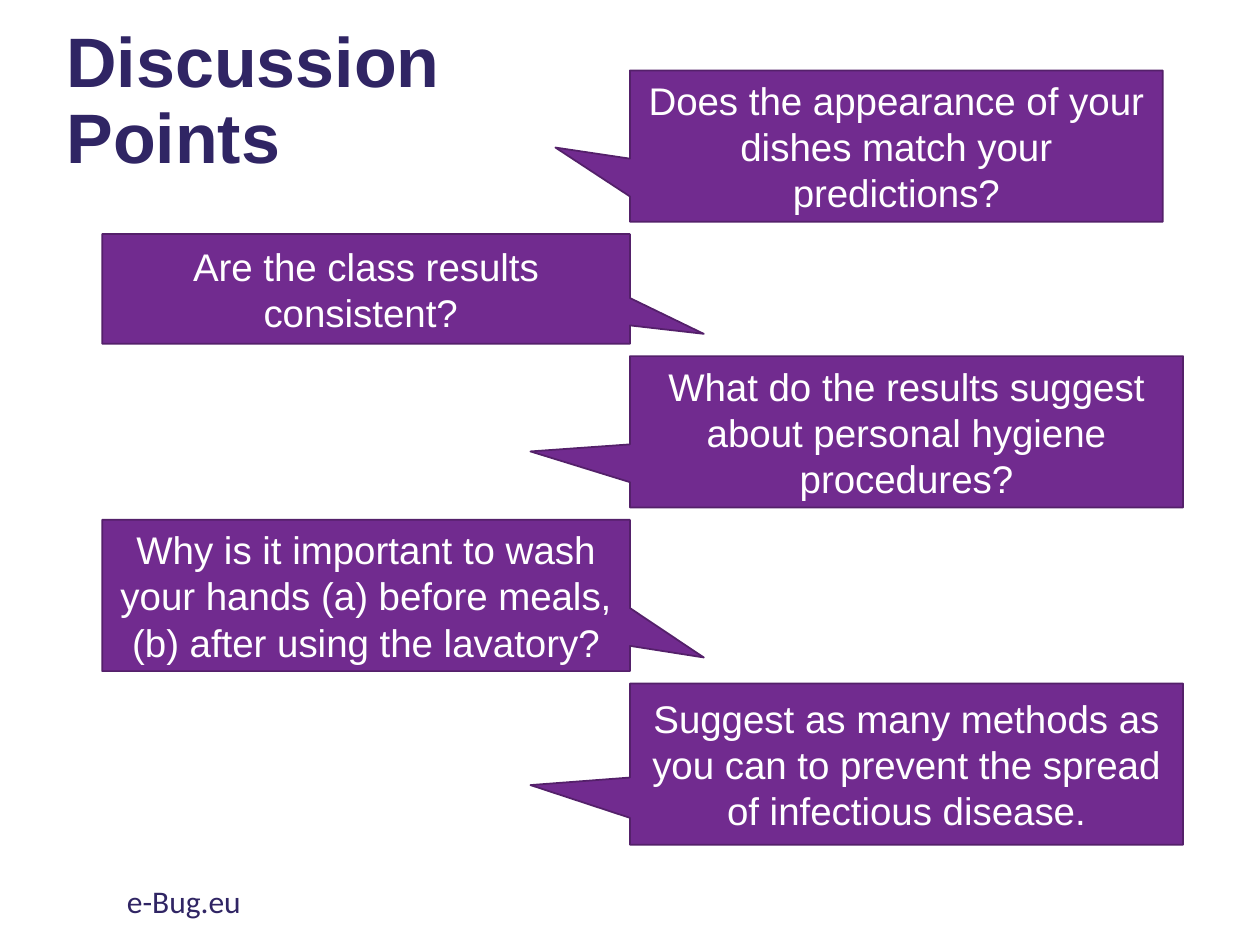
from pptx import Presentation
from pptx.dml.color import RGBColor
from pptx.enum.shapes import MSO_SHAPE
from pptx.enum.text import MSO_ANCHOR, PP_ALIGN
from pptx.util import Cm, Pt

NAVY = RGBColor(0x30, 0x25, 0x64)
PURPLE = RGBColor(0x71, 0x2B, 0x8F)
DARK_PURPLE = RGBColor(0x54, 0x20, 0x6A)
WHITE = RGBColor(0xFF, 0xFF, 0xFF)

LEFT_X, MIDDLE_X = 2.06, 12.7
FIRST_TOP, GAP = 1.42, 0.25

# Left, width, height, pointer tip (relative to the centre), question
QUESTIONS = [
    (MIDDLE_X, 10.74, 3.05, (-0.64, 0.01),
     "Does the appearance of your dishes match your predictions?"),
    (LEFT_X, 10.64, 2.21, (0.64, 0.41),
     "Are the class results consistent? "),
    (MIDDLE_X, 11.15, 3.05, (-0.68, 0.13),
     "What do the results suggest about personal hygiene procedures?"),
    (LEFT_X, 10.64, 3.05, (0.64, 0.41),
     "Why is it important to wash your hands (a) before meals, "
     "(b) after using the lavatory?"),
    (MIDDLE_X, 11.15, 3.25, (-0.68, 0.13),
     "Suggest as many methods as you can to prevent the spread "
     "of infectious disease."),
]


class SlideBuilder:
    """Holds the text style and the current slide."""

    font_name = "Arial"
    callout_size = 22

    def __init__(self, slide):
        self.slide = slide

    def set_text(self, sp, text, size, color, anchor, name=None):
        tf = sp.text_frame
        tf.word_wrap = True
        tf.vertical_anchor = anchor
        p = tf.paragraphs[0]
        p.add_run().text = text
        p.font.name = name or self.font_name
        p.font.size = Pt(size)
        p.font.color.rgb = color
        return p

    def text(self, left, top, width, height, text, size,
             anchor=MSO_ANCHOR.TOP, name=None):
        sp = self.slide.shapes.add_textbox(
            Cm(left), Cm(top), Cm(width), Cm(height))
        return self.set_text(sp, text, size, NAVY, anchor, name)

    def title(self, left, top, width, height, text):
        p = self.text(left, top, width, height, text, 40, MSO_ANCHOR.MIDDLE)
        p.font.bold = True
        p.line_spacing = 0.9

    def callout(self, left, top, width, height, tip, text):
        sp = self.slide.shapes.add_shape(
            MSO_SHAPE.RECTANGULAR_CALLOUT,
            Cm(left), Cm(top), Cm(width), Cm(height))
        sp.adjustments[0], sp.adjustments[1] = tip
        sp.shadow.inherit = False
        sp.fill.solid()
        sp.fill.fore_color.rgb = PURPLE
        sp.line.color.rgb = DARK_PURPLE
        sp.line.width = Pt(1)
        p = self.set_text(sp, text, self.callout_size, WHITE,
                          MSO_ANCHOR.MIDDLE)
        p.alignment = PP_ALIGN.CENTER


def main():
    prs = Presentation()
    prs.slide_width, prs.slide_height = Cm(25.4), Cm(19.05)
    s = SlideBuilder(prs.slides.add_slide(prs.slide_layouts[6]))

    # Title
    s.title(1.09, 0.23, 10.39, 3.68, "Discussion Points")

    # Questions, stacked with equal gaps on alternating sides
    top = FIRST_TOP
    for left, width, height, tip, question in QUESTIONS:
        s.callout(left, top, width, height, tip, question)
        top += height + GAP

    # Footer
    s.text(2.31, 17.65, 8.59, 1.02, "e-Bug.eu", 18, name="Calibri")

    prs.save("out.pptx")


if __name__ == "__main__":
    main()
